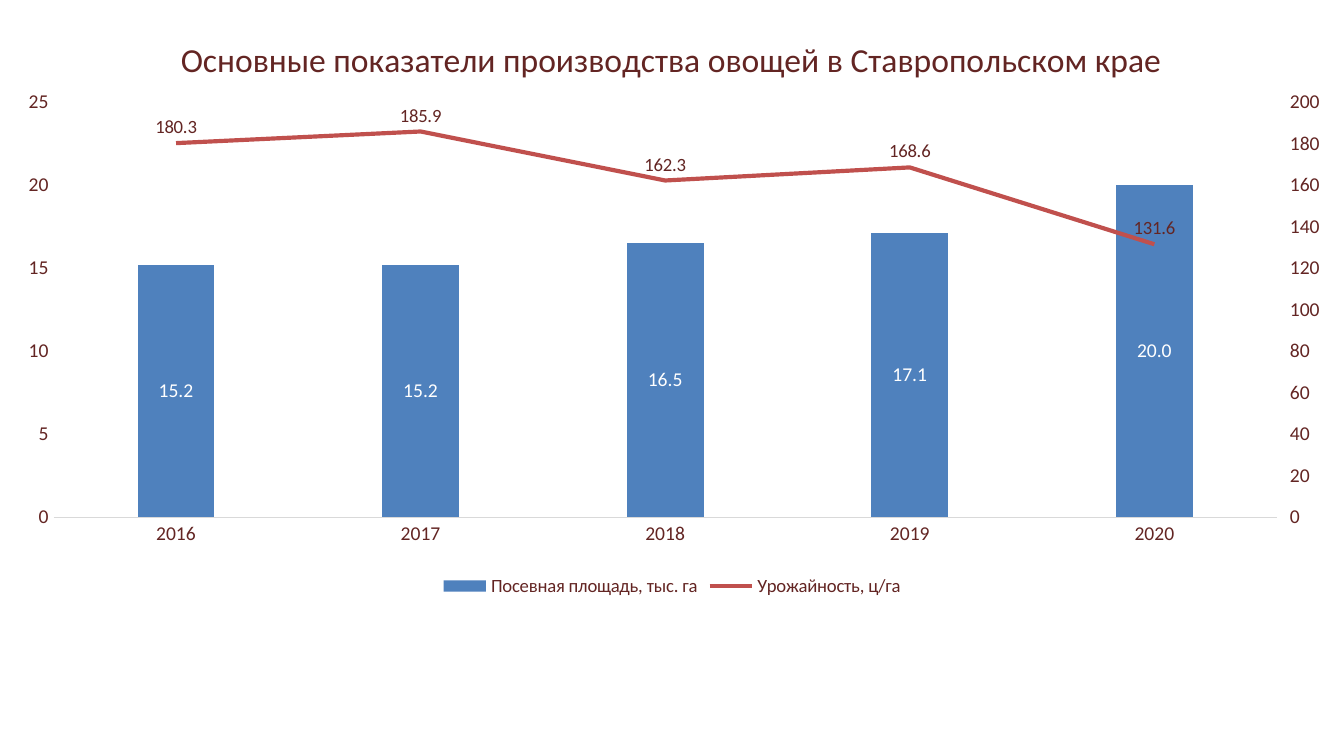
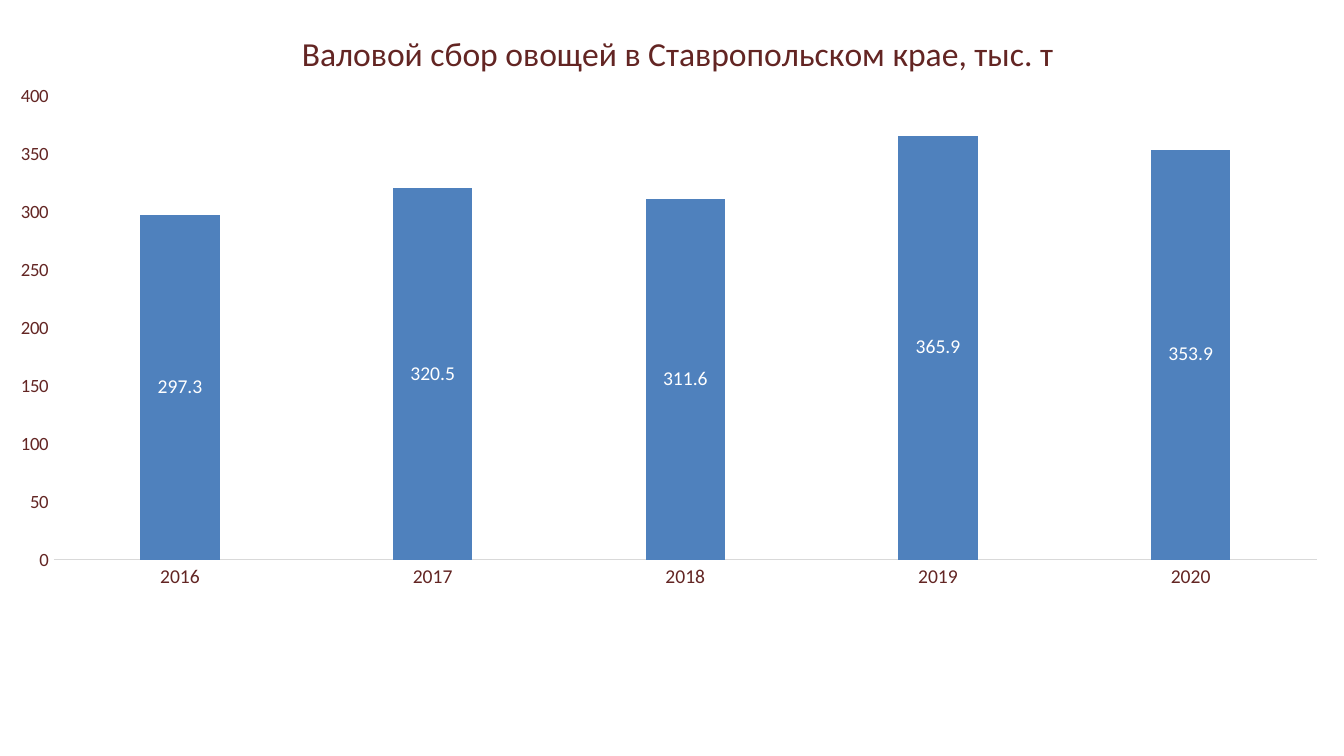
from dataclasses import dataclass

from pptx import Presentation
from pptx.chart.axis import ValueAxis
from pptx.chart.data import CategoryChartData
from pptx.dml.color import RGBColor
from pptx.enum.chart import XL_CHART_TYPE as ChartType
from pptx.enum.chart import XL_LABEL_POSITION as LabelPos
from pptx.enum.chart import XL_LEGEND_POSITION as LegendPos
from pptx.enum.chart import XL_MARKER_STYLE as Marker
from pptx.enum.chart import XL_TICK_MARK as Tick
from pptx.oxml import parse_xml
from pptx.oxml.ns import nsdecls, qn
from pptx.util import Pt


@dataclass(frozen=True)
class Theme:
    font: str = "Calibri"
    black: RGBColor = RGBColor(0x00, 0x00, 0x00)
    white: RGBColor = RGBColor(0xFF, 0xFF, 0xFF)
    ink: RGBColor = RGBColor(0x63, 0x25, 0x23)
    axis: RGBColor = RGBColor(0xD9, 0xD9, 0xD9)
    bar: RGBColor = RGBColor(0x4F, 0x81, 0xBD)
    trend: RGBColor = RGBColor(0xC0, 0x50, 0x4D)
    title: float = 18
    label: float = 10.5
    small: float = 10
    hairline: float = 0.75
    trend_width: float = 2.25


THEME = Theme()
YEARS = ["2016", "2017", "2018", "2019", "2020"]
CHART_BOX = (0, 0, 720, 322.5)

LINE_CHART = f"""<c:lineChart {nsdecls("c")}>
  <c:grouping val="standard"/><c:varyColors val="0"/>
  <c:marker val="1"/><c:axId val="301"/><c:axId val="302"/>
</c:lineChart>"""
HIDDEN_CAT_AXIS = f"""<c:catAx {nsdecls("c")}>
  <c:axId val="301"/><c:scaling><c:orientation val="minMax"/></c:scaling>
  <c:delete val="1"/><c:axPos val="b"/><c:crossAx val="302"/><c:crosses val="autoZero"/>
</c:catAx>"""
RIGHT_AXIS = f"""<c:valAx {nsdecls("c")}>
  <c:axId val="302"/><c:scaling><c:orientation val="minMax"/></c:scaling>
  <c:delete val="0"/><c:axPos val="r"/><c:numFmt formatCode="General" sourceLinked="0"/>
  <c:tickLblPos val="nextTo"/><c:crossAx val="301"/><c:crosses val="max"/>
</c:valAx>"""


def set_font(font, size, color):
    font.name = THEME.font
    font.size = Pt(size)
    font.bold = False
    font.color.rgb = color


def set_layout(element, index, **place):
    old = element.find(qn("c:layout"))
    if old is not None:
        element.remove(old)
    modes = "".join(f'<c:{k}Mode val="edge"/>' for k in ("x", "y"))
    target = '<c:layoutTarget val="inner"/>' if "w" in place else ""
    values = "".join(f'<c:{k} val="{v}"/>' for k, v in place.items())
    element.insert(index, parse_xml(
        f'<c:layout {nsdecls("c")}><c:manualLayout>{target}{modes}{values}'
        "</c:manualLayout></c:layout>"))


def style_value_axis(axis, top, step, size, tick=Tick.NONE):
    axis.minimum_scale = 0
    axis.maximum_scale = top
    axis.major_unit = step
    axis.major_tick_mark = tick
    axis.minor_tick_mark = Tick.NONE
    axis.format.line.fill.background()
    set_font(axis.tick_labels.font, size, THEME.ink)


def style_category_axis(axis):
    axis.major_tick_mark = axis.minor_tick_mark = Tick.NONE
    axis.format.line.color.rgb = THEME.axis
    axis.format.line.width = Pt(THEME.hairline)
    set_font(axis.tick_labels.font, THEME.label, THEME.ink)


def show_values(series, position, size, color):
    labels = series.data_labels
    labels.show_value = True
    labels.number_format = "0.0"
    labels.number_format_is_linked = False
    labels.position = position
    set_font(labels.font, size, color)


def add_title(chart, text, x, y):
    chart.has_title = True
    title = chart.chart_title
    title.include_in_layout = False
    r = title.text_frame.paragraphs[0].add_run()
    r.text = text
    set_font(r.font, THEME.title, THEME.ink)
    set_layout(chart._chartSpace.chart.find(qn("c:title")), 1, x=x, y=y)


def add_column_chart(slide, box, series, title, title_at, plot_area, top, step, axis_size):
    data = CategoryChartData()
    data.categories = YEARS
    for name, values in series.items():
        data.add_series(name, values)
    chart = slide.shapes.add_chart(
        ChartType.COLUMN_CLUSTERED, *(Pt(v) for v in box), data).chart
    set_font(chart.font, THEME.small, THEME.black)
    chart.has_legend = False
    add_title(chart, title, *title_at)

    plot = chart.plots[0]
    plot.vary_by_categories = False
    plot.gap_width = 219
    plot.overlap = -27
    columns = plot.series[0]
    columns.format.fill.solid()
    columns.format.fill.fore_color.rgb = THEME.bar
    show_values(columns, LabelPos.CENTER, THEME.label, THEME.white)

    style_category_axis(chart.category_axis)
    style_value_axis(chart.value_axis, top, step, axis_size)
    chart.value_axis.has_major_gridlines = True
    grid = chart.value_axis.major_gridlines.format.line
    grid.color.rgb = THEME.white
    grid.width = Pt(THEME.hairline)
    set_layout(chart._chartSpace.chart.plotArea, 0, **dict(zip("xywh", plot_area)))
    return chart


def move_to_right_axis(chart, top, step):
    area = chart._chartSpace.chart.plotArea
    bars = area.find(qn("c:barChart"))
    ser = bars.findall(qn("c:ser"))[1]
    invert = ser.find(qn("c:invertIfNegative"))
    if invert is not None:
        ser.remove(invert)
    lines = parse_xml(LINE_CHART)
    lines.insert(2, ser)
    bars.addnext(lines)
    right = parse_xml(RIGHT_AXIS)
    left = area.find(qn("c:valAx"))
    left.addnext(right)
    right.addnext(parse_xml(HIDDEN_CAT_AXIS))
    style_value_axis(ValueAxis(right), top, step, THEME.label, Tick.OUTSIDE)

    trend = chart.plots[1].series[0]
    trend.smooth = False
    trend.marker.style = Marker.NONE
    trend.format.line.color.rgb = THEME.trend
    trend.format.line.width = Pt(THEME.trend_width)
    show_values(trend, LabelPos.ABOVE, THEME.small, THEME.ink)


def add_legend(chart):
    chart.has_legend = True
    chart.legend.position = LegendPos.BOTTOM
    chart.legend.include_in_layout = False
    set_font(chart.legend.font, THEME.small, THEME.ink)


def build_area_and_yield(slide):
    chart = add_column_chart(
        slide, CHART_BOX,
        {"Посевная площадь, тыс. га": [15.2, 15.2, 16.5, 17.1, 20.0],
         "Урожайность, ц/га": [180.3, 185.9, 162.3, 168.6, 131.6]},
        "Основные показатели производства овощей в Ставропольском крае",
        (0.13, 0.05), (0.04, 0.17, 0.91, 0.69), 25, 5, THEME.label)
    move_to_right_axis(chart, 200, 20)
    add_legend(chart)


def build_harvest(slide):
    add_column_chart(
        slide, CHART_BOX,
        {"Series 1": [297.3, 320.5, 311.6, 365.9, 353.9]},
        "Валовой сбор овощей в Ставропольском крае, тыс. т",
        (0.22, 0.04), (0.04, 0.16, 0.94, 0.77), 400, 50, THEME.small)


def main():
    prs = Presentation()
    prs.slide_width, prs.slide_height = Pt(720), Pt(405)
    for build in (build_area_and_yield, build_harvest):
        s = prs.slides.add_slide(prs.slide_layouts[6])
        s.background.fill.solid()
        s.background.fill.fore_color.rgb = THEME.white
        build(s)
    prs.save("out.pptx")


if __name__ == "__main__":
    main()
